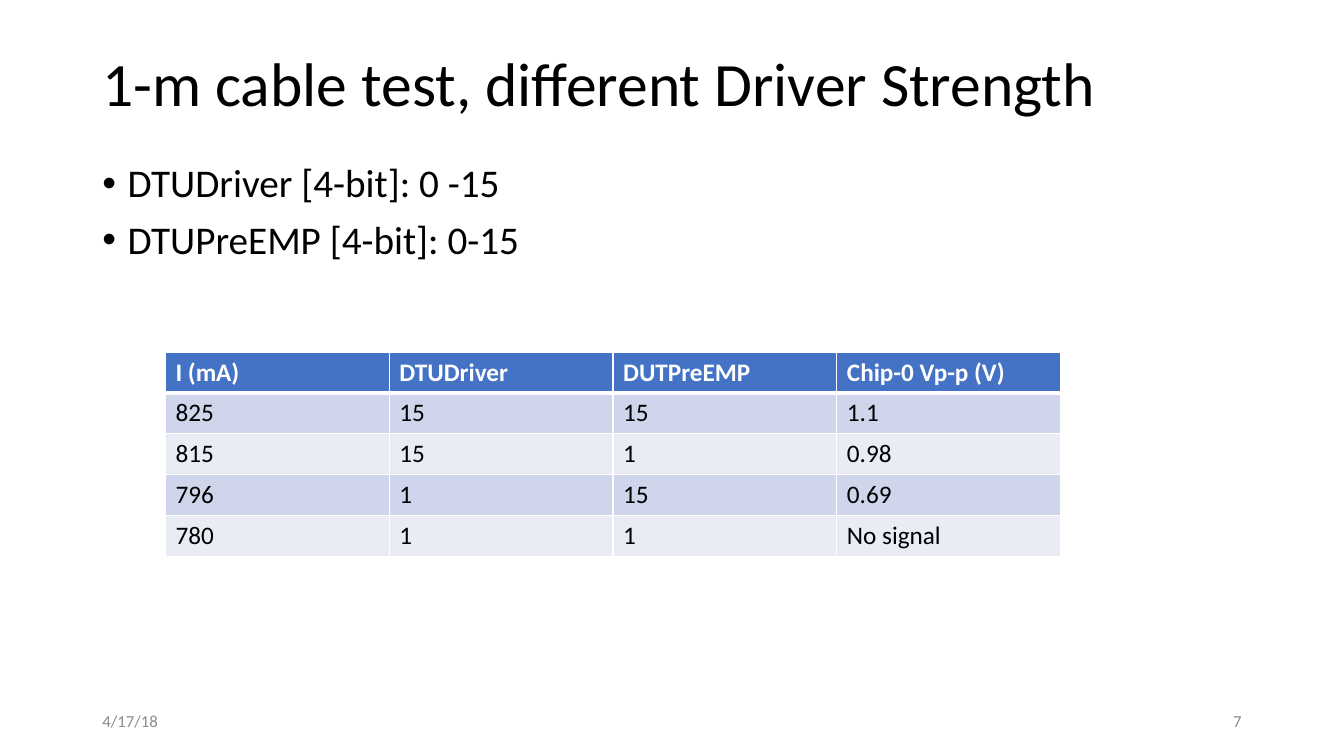
from lxml.etree import SubElement
from pptx import Presentation
from pptx.dml.color import RGBColor
from pptx.enum.text import MSO_ANCHOR as Anchor, PP_ALIGN as Align
from pptx.oxml.ns import qn
from pptx.util import Cm, Pt

TITLE = "1-m cable test, different Driver Strength"
BULLETS = ["DTUDriver [4-bit]: 0 -15", "DTUPreEMP [4-bit]: 0-15"]
MEASUREMENTS = [
    ("I (mA)", "DTUDriver", "DUTPreEMP", "Chip-0 Vp-p (V)"),
    ("825", "15", "15", "1.1"),
    ("815", "15", "1", "0.98"),
    ("796", "1", "15", "0.69"),
    ("780", "1", "1", "No signal"),
]
DATE = "4/17/18"
PAGE_NUMBER = "7"

FONT = "Calibri"
COLORS = {
    "text": "000000",
    "white": "FFFFFF",
    "footer": "8C8C8C",
    "header": "4472C4",
    "odd_row": "CFD5EA",
    "even_row": "E9EBF5",
}

SLIDE_WIDTH, SLIDE_HEIGHT = 33.87, 19.05
MARGIN = 2.33
CONTENT_WIDTH = SLIDE_WIDTH - 2 * MARGIN
FOOTER_TOP, FOOTER_WIDTH, FOOTER_HEIGHT = 17.66, 7.62, 1.01
TABLE_LEFT, TABLE_TOP = 4.17, 8.87
COLUMN_WIDTH, ROW_HEIGHT = 5.64, 1.03
THIN, THICK = 1, 3

TITLE_FORMAT = {"line_spacing": 0.9}
BULLET_FORMAT = {"line_spacing": 0.9, "space_before": Pt(10)}


def write(paragraph, text, size, color, bold=False, paragraph_format=None):
    run = paragraph.add_run()
    run.text = text
    for name, value in {"name": FONT, "size": Pt(size), "bold": bold}.items():
        setattr(run.font, name, value)
    run.font.color.rgb = RGBColor.from_string(COLORS[color])
    for name, value in (paragraph_format or {}).items():
        setattr(paragraph, name, value)


def add_text(slide, box, lines, size, color, anchor=Anchor.MIDDLE, paragraph_format=None):
    frame = slide.shapes.add_textbox(*map(Cm, box)).text_frame
    frame.word_wrap = True
    frame.vertical_anchor = anchor
    for index, line in enumerate(lines):
        paragraph = frame.add_paragraph() if index else frame.paragraphs[0]
        write(paragraph, line, size, color, paragraph_format=paragraph_format)
    return frame


def add_bullet(paragraph, indent=Cm(0.635)):
    properties = paragraph._p.get_or_add_pPr()
    properties.set("marL", str(indent))
    properties.set("indent", str(-indent))
    SubElement(properties, qn("a:buFont"), typeface="Arial")
    SubElement(properties, qn("a:buChar"), char="•")


def add_borders(cell, top, bottom):
    """Draw white cell edges; call before the fill, which must come after them."""
    properties = cell._tc.get_or_add_tcPr()
    for edge, width in (("lnL", THIN), ("lnR", THIN), ("lnT", top), ("lnB", bottom)):
        line = SubElement(properties, qn(f"a:{edge}"), w=str(Pt(width)))
        fill = SubElement(line, qn("a:solidFill"))
        SubElement(fill, qn("a:srgbClr"), val=COLORS["white"])


def add_measurements(slide):
    row_count, column_count = len(MEASUREMENTS), len(MEASUREMENTS[0])
    size = (column_count * COLUMN_WIDTH, row_count * ROW_HEIGHT)
    table = slide.shapes.add_table(
        row_count, column_count, *map(Cm, (TABLE_LEFT, TABLE_TOP, *size))
    ).table
    for column in table.columns:
        column.width = Cm(COLUMN_WIDTH)
    for row_index, values in enumerate(MEASUREMENTS):
        table.rows[row_index].height = Cm(ROW_HEIGHT)
        is_header = row_index == 0
        band = "header" if is_header else "odd_row" if row_index % 2 else "even_row"
        for column_index, value in enumerate(values):
            cell = table.cell(row_index, column_index)
            add_borders(
                cell,
                top=THICK if row_index == 1 else THIN,
                bottom=THICK if is_header else THIN,
            )
            cell.fill.solid()
            cell.fill.fore_color.rgb = RGBColor.from_string(COLORS[band])
            color = "white" if is_header else "text"
            write(cell.text_frame.paragraphs[0], value, 18, color, bold=is_header)


def main():
    presentation = Presentation()
    presentation.slide_width = Cm(SLIDE_WIDTH)
    presentation.slide_height = Cm(SLIDE_HEIGHT)
    slide = presentation.slides.add_slide(presentation.slide_layouts[6])

    title_box = (MARGIN, 0.33, CONTENT_WIDTH, 3.68)
    add_text(slide, title_box, [TITLE], 44, "text", paragraph_format=TITLE_FORMAT)

    body_box = (MARGIN, 4.01, CONTENT_WIDTH, 12.09)
    body = add_text(slide, body_box, BULLETS, 28, "text", Anchor.TOP, BULLET_FORMAT)
    for paragraph in body.paragraphs:
        add_bullet(paragraph)

    add_measurements(slide)

    page_left = SLIDE_WIDTH - MARGIN - FOOTER_WIDTH
    for left, text, alignment in (
        (MARGIN, DATE, Align.LEFT),
        (page_left, PAGE_NUMBER, Align.RIGHT),
    ):
        footer_box = (left, FOOTER_TOP, FOOTER_WIDTH, FOOTER_HEIGHT)
        add_text(slide, footer_box, [text], 12, "footer",
                 paragraph_format={"alignment": alignment})

    presentation.save("out.pptx")


if __name__ == "__main__":
    main()
